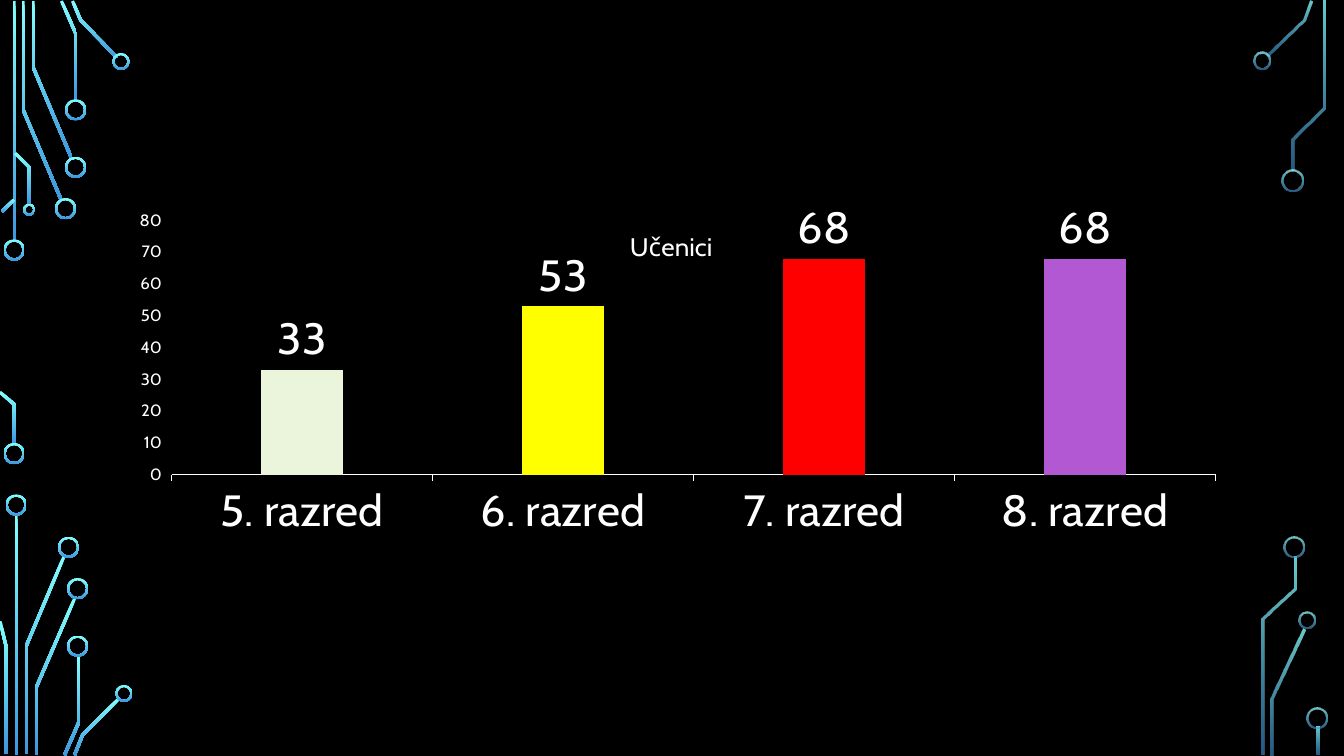
import math
import pptx
import pptx.chart.data
import pptx.dml.color
import pptx.enum.chart
import pptx.enum.shapes
import pptx.oxml
import pptx.oxml.ns
import pptx.util
from pptx.util import Inches

PUPILS = [
    ("5. razred", 33, "EBF5DB"),
    ("6. razred", 53, "FFFF00"),
    ("7. razred", 68, "FF0000"),
    ("8. razred", 68, "B258D3"),
]

LEFT_TRACES = [
    [(0.14, 0.01), (0.14, 2.4)],
    [(0.23, 0.01), (0.23, 1.09), (0.61, 1.99)],
    [(0.33, 0.01), (0.33, 0.67), (0.71, 1.57)],
    [(0.61, 0.01), (0.75, 0.33), (0.75, 1)],
    [(0.72, 0.01), (0.8, 0.2), (1.16, 0.57)],
    [(0.02, 2.1), (0.14, 1.98)],
    [(0, 3.89), (0.14, 4.01), (0.14, 4.41)],
    [(0.15, 1.52), (0.29, 1.66), (0.29, 2.03)],
    [(0.16, 5.1), (0.16, 7.49)],
    [(0.26, 7.48), (0.26, 6.41), (0.64, 5.51)],
    [(0, 6.16), (0.06, 6.41), (0.06, 7.48)],
    [(0.36, 7.49), (0.36, 6.82), (0.74, 5.94)],
    [(0.64, 7.49), (0.78, 7.17), (0.78, 6.5)],
    [(0.74, 7.49), (0.82, 7.29), (1.18, 6.93)],
]
RIGHT_TRACES = [
    [(12.57, 0.55), (12.93, 0.2), (13, 0.01)],
    [(12.62, 7.49), (12.62, 6.93), (12.93, 6.24)],
    [(12.82, 1.69), (12.82, 1.38), (13.13, 1.07), (13.13, 0.01)],
    [(12.53, 7.49), (12.53, 6.14), (12.84, 5.84), (12.84, 5.52)],
    [(13.07, 7.21), (13.07, 7.49)],
]
LARGE, MEDIUM, SMALL = 0.21, 0.17, 0.12
LEFT_NODES = [
    (0.14, 2.48, LARGE), (0.14, 4.5, LARGE), (0.65, 2.07, LARGE),
    (0.75, 1.66, LARGE), (0.75, 1.09, LARGE), (1.2, 0.61, MEDIUM),
    (0.29, 2.08, SMALL), (0.16, 5.01, LARGE), (0.68, 5.43, LARGE),
    (0.77, 5.84, LARGE), (0.77, 6.41, LARGE), (1.23, 6.88, MEDIUM),
]
RIGHT_NODES = [
    (12.52, 0.6, MEDIUM), (12.82, 1.79, LARGE), (12.96, 6.15, MEDIUM),
    (12.83, 5.43, LARGE), (13.06, 7.12, LARGE),
]


def color(code):
    return pptx.dml.color.RGBColor.from_string(code)


def format_font(font, size, ink="FFFFFF", face="Cabin", bold=False):
    font.size = pptx.util.Pt(size)
    font.name = face
    font.bold = bold
    font.color.rgb = color(ink)


def write_text(frame, text, **style):
    frame.text = text
    format_font(frame.paragraphs[0].runs[0].font, **style)


def band_outline(route, width):
    def normal(start, end):
        dx, dy = end[0] - start[0], end[1] - start[1]
        length = math.hypot(dx, dy)
        return -dy / length, dx / length

    normals = [normal(a, b) for a, b in zip(route, route[1:])]
    near, far = [], []
    for (x, y), (ax, ay), (bx, by) in zip(route, normals[:1] + normals, normals + normals[-1:]):
        reach = width / 2 / (1 + ax * bx + ay * by)
        ox, oy = (ax + bx) * reach, (ay + by) * reach
        near.append((Inches(x + ox), Inches(y + oy)))
        far.append((Inches(x - ox), Inches(y - oy)))
    return near + far[::-1]


def place(parent, index, **values):
    for old in parent.findall(pptx.oxml.ns.qn("c:layout")):
        parent.remove(old)
    parts = "".join(f'<c:{key} val="{value}"/>' for key, value in values.items())
    parent.insert(index, pptx.oxml.parse_xml(
        f'<c:layout {pptx.oxml.ns.nsdecls("c")}><c:manualLayout>{parts}</c:manualLayout></c:layout>'))


class CircuitSlide:
    top_color, bottom_color = "82FFFF", "3D97DE"
    trace_width, ring_width = 0.03, 0.02

    def __init__(self, deck):
        self.slide = deck.slides.add_slide(deck.slide_layouts[6])
        self.slide.background.fill.solid()
        self.slide.background.fill.fore_color.rgb = color("000000")

    def glow(self, shape, opacity):
        shape.shadow.inherit = False
        shape.line.fill.background()
        shape.fill.gradient()
        shape.fill.gradient_angle = 270
        for stop, code in zip(shape.fill.gradient_stops, (self.top_color, self.bottom_color)):
            stop.color.rgb = color(code)
        if opacity:
            for tint, percent in zip(shape._element.spPr.iter(pptx.oxml.ns.qn("a:srgbClr")), opacity):
                tint.append(pptx.oxml.parse_xml(
                    f'<a:alpha {pptx.oxml.ns.nsdecls("a")} val="{percent * 1000}"/>'))

    def trace(self, route, opacity=None):
        outline = band_outline(route, self.trace_width)
        builder = self.slide.shapes.build_freeform(*outline[0])
        builder.add_line_segments(outline[1:], close=True)
        self.glow(builder.convert_to_shape(), opacity)

    def node(self, x, y, size, opacity=None):
        ring = self.slide.shapes.add_shape(
            pptx.enum.shapes.MSO_SHAPE.DONUT,
            Inches(x - size / 2), Inches(y - size / 2), Inches(size), Inches(size))
        ring.adjustments[0] = self.ring_width / size
        self.glow(ring, opacity)

    def column_chart(self, title, rows, left, top, width, height):
        names, counts, fills = zip(*rows)
        data = pptx.chart.data.CategoryChartData()
        data.categories = names
        data.add_series("Series 1", counts)
        kinds = pptx.enum.chart
        chart = self.slide.shapes.add_chart(
            kinds.XL_CHART_TYPE.COLUMN_CLUSTERED,
            Inches(left), Inches(top), Inches(width), Inches(height), data).chart
        format_font(chart.font, 10)
        chart.has_legend = False
        chart.has_title = True
        write_text(chart.chart_title.text_frame, title, size=18.6)

        heading = chart._chartSpace.xpath("c:chart/c:title")[0]
        place(heading, 1, xMode="edge", yMode="edge", x=0.457, y=0.034)
        heading.find(pptx.oxml.ns.qn("c:overlay")).set("val", "1")
        place(chart._chartSpace.xpath("c:chart/c:plotArea")[0], 0, layoutTarget="inner",
              xMode="edge", yMode="edge", x=0.042, y=0.023, w=0.956, h=0.67)

        grades, scale = chart.category_axis, chart.value_axis
        for axis, size in ((grades, 32), (scale, 12)):
            axis.has_major_gridlines = False
            axis.major_tick_mark = kinds.XL_TICK_MARK.OUTSIDE
            format_font(axis.tick_labels.font, size)
        grades.format.line.color.rgb = color("FFFFFF")
        grades.format.line.width = pptx.util.Pt(0.75)
        scale.format.line.fill.background()
        scale.minimum_scale, scale.maximum_scale, scale.major_unit = 0, 80, 10

        plot = chart.plots[0]
        plot.vary_by_categories = False
        plot.gap_width, plot.overlap = 219, -27
        series = plot.series[0]
        series.format.fill.solid()
        series.format.fill.fore_color.rgb = color("9ACD4C")
        for index, code in enumerate(fills):
            column = series.points[index].format.fill
            column.solid()
            column.fore_color.rgb = color(code)
        labels = series.data_labels
        labels.show_value = True
        labels.position = kinds.XL_LABEL_POSITION.OUTSIDE_END
        format_font(labels.font, 32)


def main():
    deck = pptx.Presentation()
    deck.slide_width, deck.slide_height = Inches(13.33), Inches(7.5)
    page = CircuitSlide(deck)
    for traces, nodes, opacity in (
        (LEFT_TRACES, LEFT_NODES, None),
        (RIGHT_TRACES, RIGHT_NODES, (80, 60)),
    ):
        for route in traces:
            page.trace(route, opacity)
        for x, y, size in nodes:
            page.node(x, y, size, opacity)
    page.column_chart("Učenici", PUPILS, 1.25, 2, 10.83, 3.87)
    deck.save("out.pptx")


if __name__ == "__main__":
    main()
